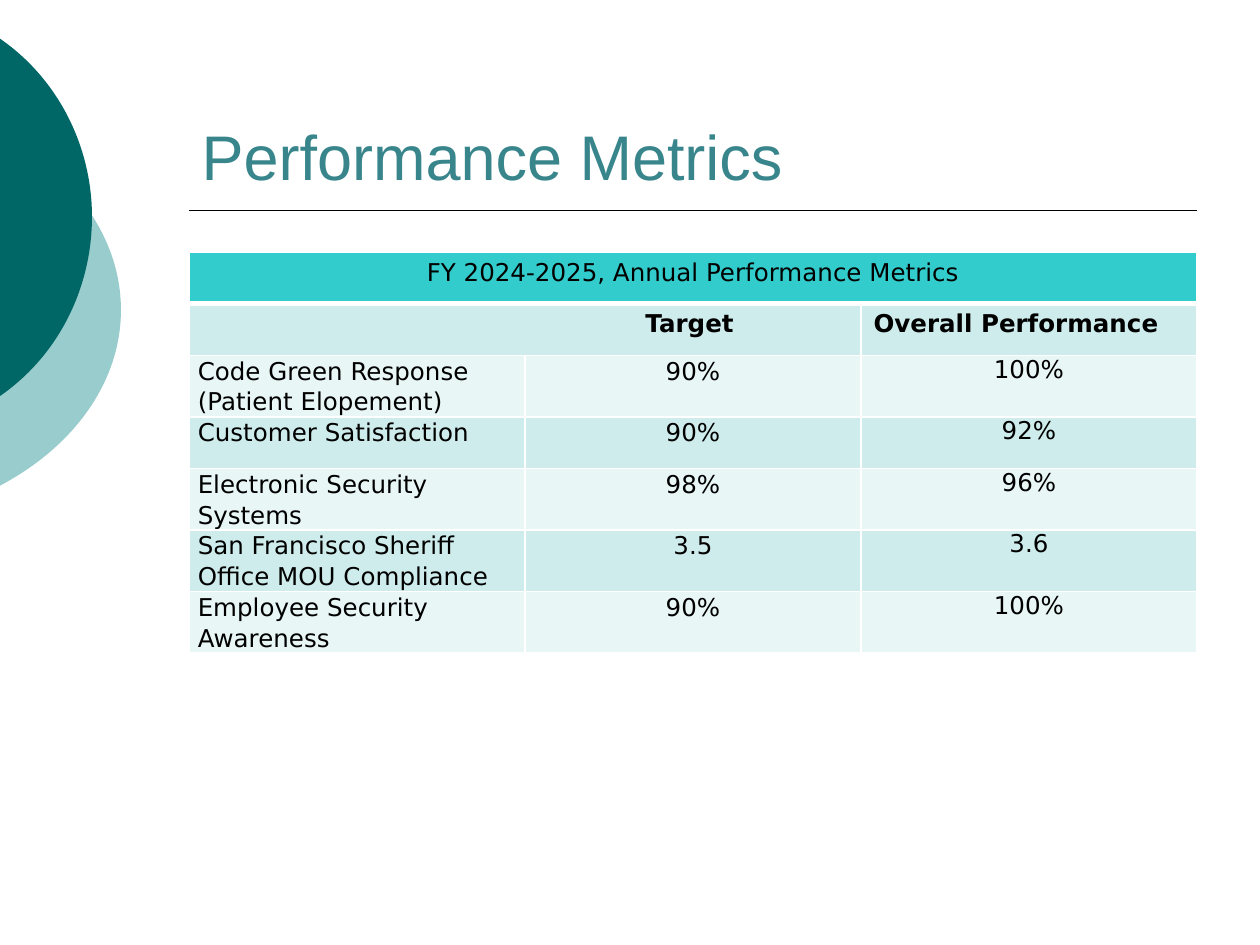
"""Builds the Performance Metrics slide with its annual results table."""
from lxml.etree import SubElement
from pptx import Presentation
from pptx.dml.color import RGBColor
from pptx.enum.shapes import MSO_CONNECTOR
from pptx.enum.text import MSO_ANCHOR, PP_ALIGN
from pptx.oxml.ns import qn
from pptx.util import Inches, Pt

TEAL = RGBColor(0x00, 0x66, 0x66)
PALE_TEAL = RGBColor(0x99, 0xCC, 0xCC)
TITLE_TEAL = RGBColor(0x38, 0x85, 0x8C)
TURQUOISE = RGBColor(0x33, 0xCC, 0xCC)
BAND_DARK = RGBColor(0xCE, 0xEC, 0xEC)
BAND_LIGHT = RGBColor(0xE8, 0xF6, 0xF6)
BLACK = RGBColor(0, 0, 0)
WHITE = RGBColor(0xFF, 0xFF, 0xFF)

TITLE = "Performance Metrics"
CAPTION = "FY 2024-2025, Annual Performance Metrics"
TARGET_HEADING, RESULT_HEADING = "Target", "Overall Performance"
METRICS = [
    ("Code Green Response (Patient Elopement)", "90%", "100%"),
    ("Customer Satisfaction", "90%", "92%"),
    ("Electronic Security Systems", "98%", "96%"),
    ("San Francisco Sheriff Office MOU Compliance", "3.5", "3.6"),
    ("Employee Security Awareness", "90%", "100%"),
]
ARCS = [
    (PALE_TEAL, (-3.54, 0.75, 4.5, 3.42), (-0.01, 1.06),
     [[(0.6, 1.38), (0.96, 1.9), (0.96, 2.46)],
      [(0.96, 3.02), (0.6, 3.54), (-0.01, 3.86)]]),
    (TEAL, (-2.65, 0, 3.38, 3.45), (-0.01, 0.3),
     [[(0.46, 0.62), (0.73, 1.16), (0.73, 1.72)],
      [(0.73, 2.29), (0.46, 2.83), (-0.01, 3.15)]]),
]
LEFT, WIDTH = 1.5, 8
ROW_HEIGHT = 0.41


def add_arc(slide, color, frame, start, curves):
    left, top, width, height = (Inches(length) for length in frame)
    outline = slide.shapes.build_freeform(left, top)
    outline.add_line_segments([(left + width, top + height)])
    arc = outline.convert_to_shape()
    arc.shadow.inherit = False
    arc.fill.solid()
    arc.fill.fore_color.rgb = color
    arc.line.fill.background()

    contour = next(arc.element.iter(qn("a:path")))
    for segment in list(contour):
        contour.remove(segment)
    for command, points in [("moveTo", [start])] + [
            ("cubicBezTo", curve) for curve in curves]:
        segment = SubElement(contour, qn(f"a:{command}"))
        for x, y in points:
            SubElement(segment, qn("a:pt"),
                       x=str(Inches(x) - left), y=str(Inches(y) - top))
    SubElement(contour, qn("a:close"))


def add_rule(slide):
    y = Inches(1.67)
    rule = slide.shapes.add_connector(
        MSO_CONNECTOR.STRAIGHT, Inches(LEFT), y, Inches(LEFT + WIDTH), y)
    rule.line.color.rgb = BLACK
    rule.line.width = Pt(1)
    SubElement(rule.element.spPr, qn("a:effectLst"))


def set_font(paragraph, name, size, color, bold=False):
    font = paragraph.font
    font.name, font.size, font.bold = name, Pt(size), bold
    font.color.rgb = color


def add_title(slide):
    title = slide.shapes.title
    title.left, title.top = Inches(LEFT), Inches(0.33)
    title.width, title.height = Inches(WIDTH), Inches(1.25)
    title.text_frame.text = TITLE
    title.text_frame.vertical_anchor = MSO_ANCHOR.BOTTOM
    paragraph = title.text_frame.paragraphs[0]
    paragraph.alignment = PP_ALIGN.LEFT
    set_font(paragraph, "Arial", 36, TITLE_TEAL)


def set_borders(cell, bottom):
    properties = cell._tc.get_or_add_tcPr()
    for side, width in (("L", 1), ("R", 1), ("T", 1), ("B", bottom)):
        border = SubElement(properties, qn(f"a:ln{side}"), w=str(Pt(width)))
        fill = SubElement(border, qn("a:solidFill"))
        SubElement(fill, qn("a:srgbClr"), val=str(WHITE))


def write_cell(cell, text, align=PP_ALIGN.LEFT, bold=False):
    cell.text = text
    paragraph = cell.text_frame.paragraphs[0]
    paragraph.alignment = align
    set_font(paragraph, "DejaVu Sans", 14, BLACK, bold)
    return paragraph


def add_metrics_table(slide):
    row_count = len(METRICS) + 2
    table = slide.shapes.add_table(
        row_count, 3, Inches(LEFT), Inches(2),
        Inches(WIDTH), Inches(ROW_HEIGHT * row_count)).table
    table.first_row = table.horz_banding = False
    for r in range(row_count):
        for c in range(3):
            cell = table.cell(r, c)
            set_borders(cell, bottom=1 if r else 3)
            cell.fill.solid()
            cell.fill.fore_color.rgb = (
                TURQUOISE if r == 0 else BAND_DARK if r % 2 else BAND_LIGHT)

    caption, target = table.cell(0, 0), table.cell(1, 0)
    caption.merge(table.cell(0, 2))
    target.merge(table.cell(1, 1))
    write_cell(caption, CAPTION, PP_ALIGN.CENTER)
    write_cell(target, TARGET_HEADING, PP_ALIGN.RIGHT, bold=True)
    target.margin_right = Inches(1.01)
    write_cell(table.cell(1, 2), RESULT_HEADING, bold=True)

    for r, metric in enumerate(METRICS, start=2):
        for c, text in enumerate(metric):
            cell = table.cell(r, c)
            cell.margin_left = cell.margin_right = Inches(0.07)
            cell.margin_top = cell.margin_bottom = 0
            paragraph = write_cell(
                cell, text, PP_ALIGN.CENTER if c else PP_ALIGN.LEFT)
            if c == 2:
                paragraph.space_after = Pt(6)
            else:
                paragraph.line_spacing = 1.07


def main():
    deck = Presentation()
    deck.slide_width, deck.slide_height = Inches(10), Inches(7.5)
    slide = deck.slides.add_slide(deck.slide_layouts[5])
    for arc in ARCS:
        add_arc(slide, *arc)
    add_rule(slide)
    add_title(slide)
    add_metrics_table(slide)
    deck.save("out.pptx")


if __name__ == "__main__":
    main()
